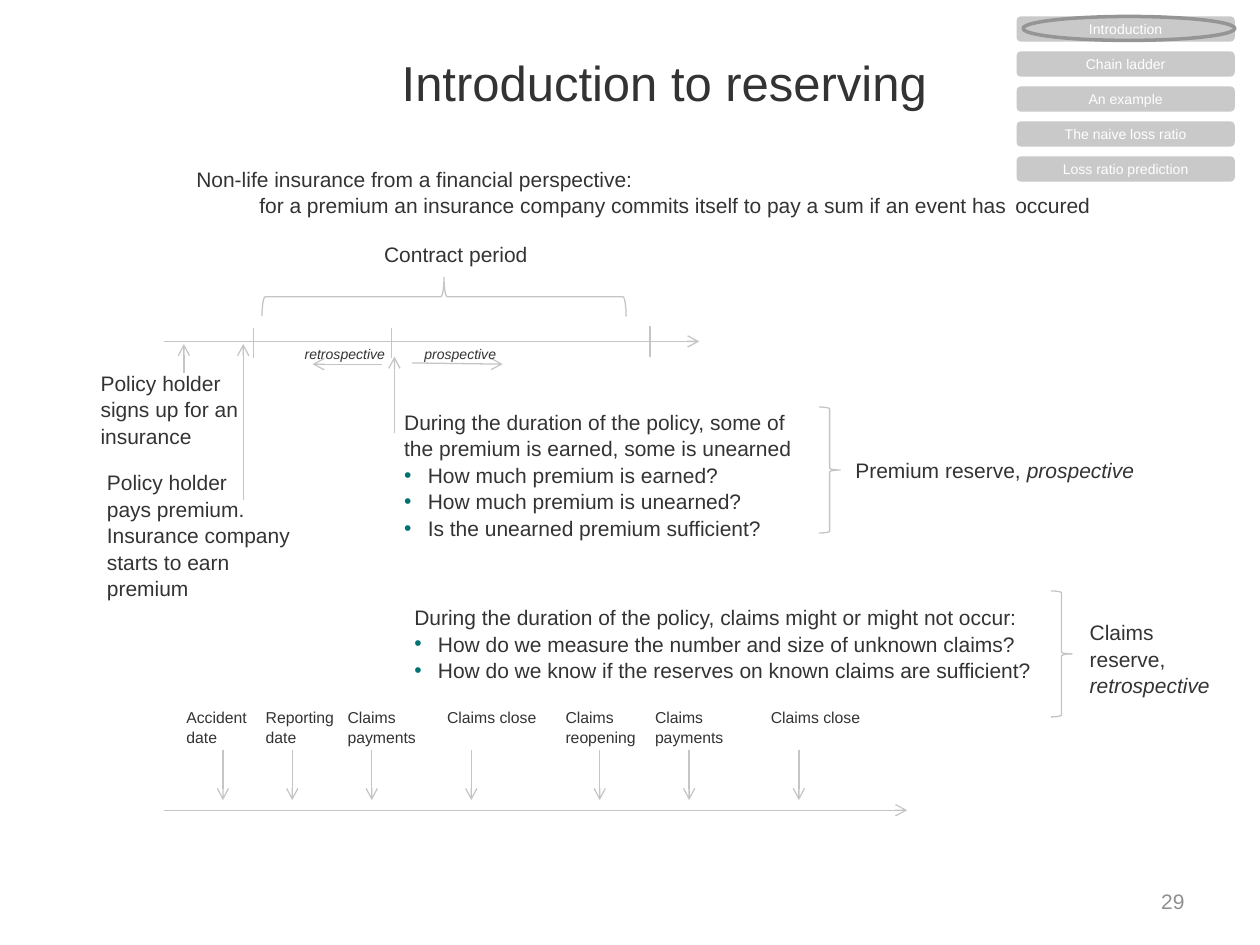
from pptx import Presentation
from pptx.dml.color import RGBColor
from pptx.enum.shapes import MSO_CONNECTOR, MSO_SHAPE
from pptx.enum.text import MSO_ANCHOR, MSO_AUTO_SIZE, PP_ALIGN
from pptx.oxml.ns import qn
from pptx.util import Pt
from lxml.etree import SubElement

FONT = "Arial"
TEXT, LINE, NAV, RING, BULLET = "333333", "C5C5C5", "C9C9C9", "959595", "007272"
INDENT = 13.5

# Content: "• " starts a bullet, "_" switches italics on
SECTIONS = ["Introduction", "Chain ladder", "An example",
            "The naive loss ratio", "Loss ratio prediction"]

# (left, top, width, height, lines, format)
NOTES = [
    (70.6, 9.4, 617.8, 73.4, ["Introduction to reserving"],
     dict(size=28, align=PP_ALIGN.CENTER, anchor=MSO_ANCHOR.MIDDLE, wrap=True)),
    (516.2, 500.4, 167.8, 28.8, ["29"],
     dict(color="909090", align=PP_ALIGN.RIGHT, anchor=MSO_ANCHOR.MIDDLE, wrap=True)),
    (105.1, 90.7, 578.2, 36,
     ["Non-life insurance from a financial perspective:",
      "\tfor a premium an insurance company commits itself to pay a sum "
      "if an event has \toccured"], dict(wrap=True)),
    (212.4, 133.9, 97.2, 21.6, ["Contract period"], {}),
    (50.4, 207.4, 93.6, 51.1,
     ["Policy holder", "signs up for an", "insurance"], {}),
    (54, 264.2, 128.2, 79.9,
     ["Policy holder", "pays premium.", "Insurance company",
      "starts to earn premium"], dict(wrap=True)),
    (223.9, 229.7, 237.6, 79.9,
     ["During the duration of the policy, some of",
      "the premium is earned, some is unearned",
      "• How much premium is earned?",
      "• How much premium is unearned?",
      "• Is the unearned premium sufficient?"], {}),
    (229.7, 341.3, 370.1, 51.1,
     ["During the duration of the policy, claims might or might not occur:",
      "• How do we measure the number and size of unknown claims?",
      "• How do we know if the reserves on known claims are sufficient?"], {}),
    (481.7, 257, 175, 21.6, ["Premium reserve, _prospective"], {}),
    (615.6, 349.9, 83.5, 51.1, ["Claims", "reserve,", "_retrospective"], {}),
    (235.4, 193.7, 56.2, 17.3, ["_prospective"], dict(size=8)),
    (167, 193.7, 61.2, 13.7, ["_retrospective"], dict(size=8)),
]

# Claim timeline: (label left, label width, arrow x, label lines)
CLAIM_EVENTS = [
    (99.4, 49.7, 127.4, ["Accident", "date"]),
    (144.7, 54, 167, ["Reporting", "date"]),
    (191.5, 54, 212.4, ["Claims", "payments"]),
    (248.4, 66.2, 269.3, ["Claims close"]),
    (316.1, 54.7, 342.7, ["Claims", "reopening"]),
    (367.2, 54, 393.8, ["Claims", "payments"]),
    (433.4, 66.2, 456.5, ["Claims close"]),
]

# (x1, y1, x2, y2)
ARROWS = [
    (93.6, 195.1, 399.6, 195.1),    # contract timeline
    (105.1, 213.1, 105.1, 196.6),   # sign-up
    (139, 285.8, 139, 196.6),       # premium payment
    (225.4, 247.7, 225.4, 203.8),   # today
    (235.4, 207.4, 287.3, 208.1),   # prospective
    (218.2, 208.1, 178.6, 208.1),   # retrospective
    (93.6, 463, 518.4, 463),        # claim timeline
] + [(x, 428.4, x, 457.2) for _, _, x, _ in CLAIM_EVENTS]
TICKS = [(144.7, 187.2), (223.9, 187.2), (371.5, 186.5)]

# (left, top, width, height, rotation)
BRACES = [(242.6, 65.5, 22.3, 208.1, 270),
          (468, 232.6, 12.2, 72, 0),
          (600.5, 337.7, 12.2, 72, 0)]


def rgb(value):
    return RGBColor.from_string(value)


def add_runs(p, text, size, color):
    for i, part in enumerate(text.split("_")):
        if not part:
            continue
        r = p.add_run()
        r.text = part
        values = dict(name=FONT, size=Pt(size), italic=i > 0)
        for key, value in values.items():
            setattr(r.font, key, value)
        r.font.color.rgb = rgb(color)


def add_bullet(p):
    pPr = p._p.get_or_add_pPr()
    pPr.set("marL", str(Pt(INDENT)))
    pPr.set("indent", str(-Pt(INDENT)))
    clr = SubElement(pPr, qn("a:buClr"))
    SubElement(clr, qn("a:srgbClr"), val=BULLET)
    SubElement(pPr, qn("a:buFont"), typeface=FONT)
    SubElement(pPr, qn("a:buChar"), char="•")


def add_text(s, box, lines, size=12, color=TEXT, align=PP_ALIGN.LEFT,
             anchor=MSO_ANCHOR.TOP, wrap=False):
    tf = s.shapes.add_textbox(*map(Pt, box)).text_frame
    values = dict(word_wrap=wrap, vertical_anchor=anchor)
    if anchor == MSO_ANCHOR.TOP:
        values["auto_size"] = MSO_AUTO_SIZE.SHAPE_TO_FIT_TEXT
    for key, value in values.items():
        setattr(tf, key, value)
    for i, line in enumerate(lines):
        p = tf.add_paragraph() if i else tf.paragraphs[0]
        p.alignment, p.line_spacing = align, 1.05
        if line.startswith("• "):
            add_bullet(p)
        add_runs(p, line.removeprefix("• "), size, color)


def add_line(s, ends, arrow=False):
    c = s.shapes.add_connector(MSO_CONNECTOR.STRAIGHT, *map(Pt, ends))
    c.line.color.rgb, c.line.width = rgb(LINE), Pt(0.75)
    if arrow:
        SubElement(c.line._get_or_add_ln(), qn("a:tailEnd"), type="arrow")
    SubElement(c._element.spPr, qn("a:effectLst"))


def add_outline(s, kind, box, color, width):
    sp = s.shapes.add_shape(kind, *map(Pt, box))
    sp.shadow.inherit = False
    sp.fill.background()
    sp.line.color.rgb, sp.line.width = rgb(color), Pt(width)
    return sp


prs = Presentation()
prs.slide_width, prs.slide_height = Pt(720), Pt(540)
s = prs.slides.add_slide(prs.slide_layouts[6])

# Timelines, ticks and braces
for ends in ARROWS:
    add_line(s, ends, arrow=True)
for x, y in TICKS:
    add_line(s, (x, y, x, y + 17.3))
for *box, rotation in BRACES:
    add_outline(s, MSO_SHAPE.RIGHT_BRACE, box, LINE, 0.75).rotation = rotation

# Texts and claim labels
for *box, lines, style in NOTES:
    add_text(s, box, lines, **style)
for left, width, _, lines in CLAIM_EVENTS:
    add_text(s, (left, 400.3, width, 7.2 + 10.8 * len(lines)), lines, size=9)

# Section navigation, with a ring on the current one
for i, name in enumerate(SECTIONS):
    sp = s.shapes.add_shape(MSO_SHAPE.ROUNDED_RECTANGLE, Pt(581), Pt(9.4 + 20 * i),
                            Pt(124.6), Pt(14.4))
    sp.shadow.inherit = False
    sp.fill.solid()
    sp.fill.fore_color.rgb = rgb(NAV)
    sp.line.fill.background()
    tf = sp.text_frame
    tf.vertical_anchor = MSO_ANCHOR.MIDDLE
    p = tf.paragraphs[0]
    p.alignment = PP_ALIGN.CENTER
    add_runs(p, name, 8, "FFFFFF")
add_outline(s, MSO_SHAPE.OVAL, (584.6, 9.4, 121, 13.7), RING, 2)

prs.save("out.pptx")
